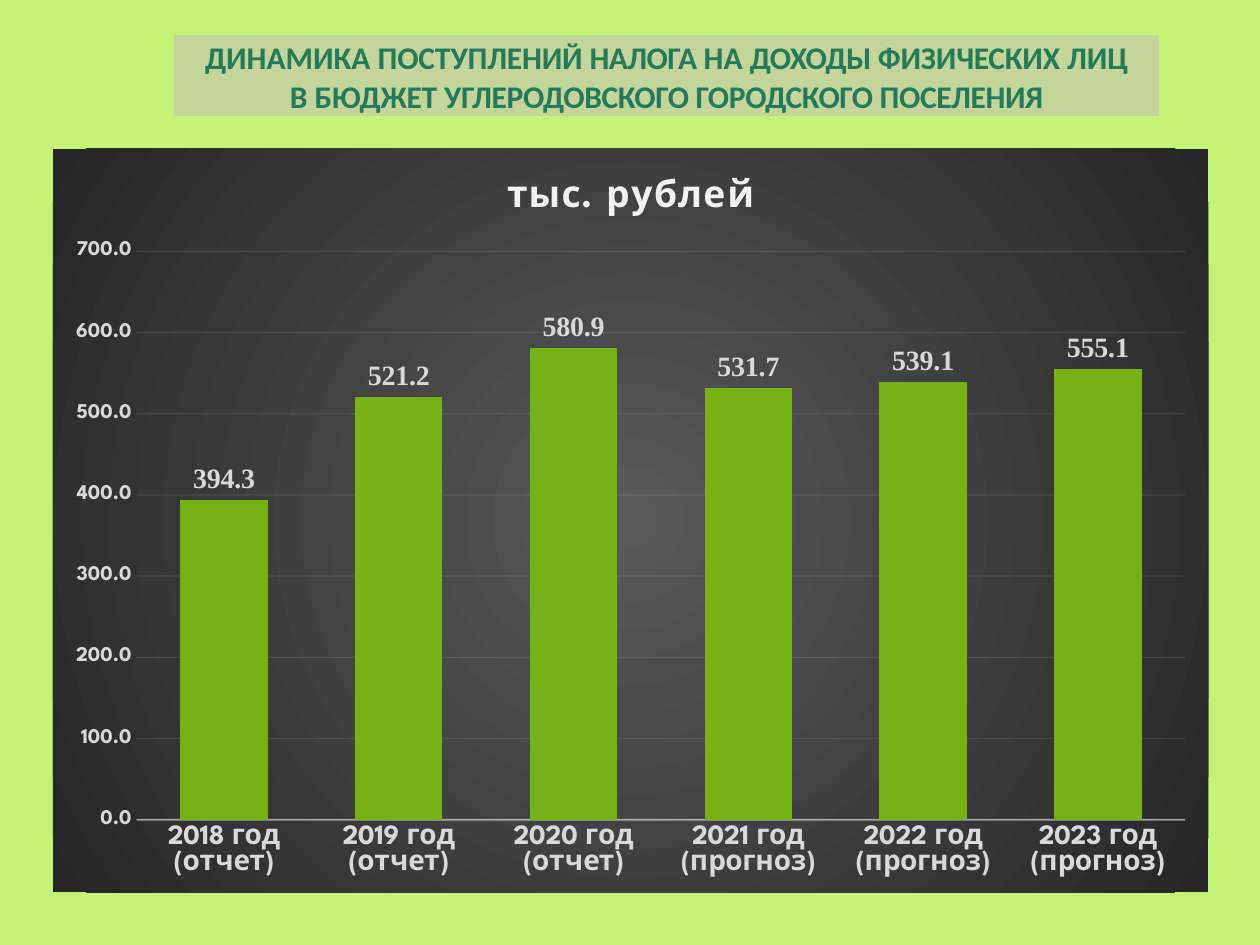
from lxml.etree import SubElement
from pptx import Presentation
from pptx.chart.data import CategoryChartData
from pptx.dml.color import RGBColor
from pptx.enum.chart import XL_CHART_TYPE, XL_LABEL_POSITION, XL_TICK_MARK
from pptx.enum.shapes import MSO_SHAPE
from pptx.enum.text import MSO_ANCHOR, PP_ALIGN
from pptx.oxml import parse_xml
from pptx.oxml.ns import nsdecls, qn
from pptx.util import Inches, Pt

LIME = RGBColor(0xC5, 0xF3, 0x75)
SAGE = RGBColor(0xC3, 0xD5, 0x9B)
HEADING_GREEN = RGBColor(0x25, 0x7A, 0x57)
BAR_GREEN = RGBColor(0x76, 0xB1, 0x15)
WHITE = RGBColor(0xFF, 0xFF, 0xFF)
OFF_WHITE = RGBColor(0xF2, 0xF2, 0xF2)
LIGHT_GREY = RGBColor(0xD9, 0xD9, 0xD9)

CHART_FONT = "League Spartan"
UNIT = "тыс. рублей"

# Each run is its text and its letter spacing in hundredths of a point.
HEADING = [
    [("ДИНАМИКА ", 0), ("ПОСТУПЛЕНИЙ ", -10), ("НАЛОГА ", -30), ("НА ", 0),
     ("ДОХОДЫ ", -30), ("ФИЗИЧЕСКИХ ", -10), ("ЛИЦ", 0)],
    [("В ", 0), ("БЮДЖЕТ ", -10),
     ("УГЛЕРОДОВСКОГО ГОРОДСКОГО ПОСЕЛЕНИЯ", -20)],
]
INCOME = [
    ("2018 год (отчет)", 394.3),
    ("2019 год (отчет)", 521.2),
    ("2020 год (отчет)", 580.9),
    ("2021 год (прогноз)", 531.7),
    ("2022 год (прогноз)", 539.1),
    ("2023 год (прогноз)", 555.1),
]


def set_font(font, name, size, color, bold=True):
    font.name = name
    font.size = Pt(size)
    font.bold = bold
    font.color.rgb = color


def set_spacing(run, hundredths):
    run.font._element.set("spc", str(hundredths))


def add_panel(slide, left, top, width, height, color):
    panel = slide.shapes.add_shape(
        MSO_SHAPE.RECTANGLE, Inches(left), Inches(top), Inches(width), Inches(height))
    panel.shadow.inherit = False
    panel.fill.solid()
    panel.fill.fore_color.rgb = color
    panel.line.fill.background()
    return panel


def add_heading(slide):
    frame = add_panel(slide, 1.38, 0.28, 7.82, 0.64, SAGE).text_frame
    frame.word_wrap = True
    frame.vertical_anchor = MSO_ANCHOR.TOP
    frame.margin_left = frame.margin_right = frame.margin_bottom = 0
    frame.margin_top = Inches(0.02)
    for index, runs in enumerate(HEADING):
        line = frame.add_paragraph() if index else frame.paragraphs[0]
        line.alignment = PP_ALIGN.CENTER
        line.line_spacing = 1.02
        for text, spacing in runs:
            run = line.add_run()
            run.text = text
            set_font(run.font, "Calibri", 18, HEADING_GREEN)
            set_spacing(run, spacing)


def set_line(line, color, width):
    line.color.rgb = color
    line.width = Pt(width)


def set_opacity(chart, line_xpath, percent):
    for color in chart._chartSpace.xpath(line_xpath + "/c:spPr/a:ln//a:srgbClr"):
        SubElement(color, qn("a:alpha")).set("val", str(percent * 1000))


def fill_chart_area(chart):
    """Put a circular dark gradient behind the whole chart."""
    area = parse_xml(
        f'<c:spPr {nsdecls("c", "a")}><a:gradFill><a:gsLst>'
        '<a:gs pos="0"><a:srgbClr val="595959"/></a:gs>'
        '<a:gs pos="100000"><a:srgbClr val="262626"/></a:gs></a:gsLst>'
        '<a:path path="circle"><a:fillToRect l="50000" t="50000" r="50000" b="50000"/>'
        '</a:path></a:gradFill><a:ln><a:noFill/></a:ln></c:spPr>')
    chart._chartSpace.find(qn("c:chart")).addnext(area)


def style_title(chart):
    chart.has_title = True
    run = chart.chart_title.text_frame.paragraphs[0].add_run()
    run.text = UNIT
    set_font(run.font, CHART_FONT, 21.3, OFF_WHITE)
    set_spacing(run, 100)
    chart.chart_title.include_in_layout = False


def style_axes(chart):
    years, amounts = chart.category_axis, chart.value_axis
    for axis, size in ((years, 16), (amounts, 12)):
        axis.major_tick_mark = axis.minor_tick_mark = XL_TICK_MARK.NONE
        set_font(axis.tick_labels.font, CHART_FONT, size, LIGHT_GREY)
    set_line(years.format.line, OFF_WHITE, 1)
    set_opacity(chart, ".//c:catAx", 54)

    amounts.minimum_scale, amounts.maximum_scale = 0, 700
    amounts.major_unit = 100
    amounts.tick_labels.number_format = "0.0"
    amounts.tick_labels.number_format_is_linked = False
    amounts.format.line.fill.background()
    set_line(amounts.major_gridlines.format.line, OFF_WHITE, 0.75)
    set_opacity(chart, ".//c:valAx/c:majorGridlines", 10)


def style_bars(chart):
    plot = chart.plots[0]
    plot.gap_width = 100
    plot.overlap = -24
    plot.vary_by_categories = False
    bars = plot.series[0]
    bars.format.fill.solid()
    bars.format.fill.fore_color.rgb = BAR_GREEN
    labels = bars.data_labels
    labels.show_value = True
    labels.position = XL_LABEL_POSITION.OUTSIDE_END
    labels.number_format = "0.0"
    labels.number_format_is_linked = False
    set_font(labels.font, "Times New Roman", 16, LIGHT_GREY)


def add_income_chart(slide):
    data = CategoryChartData(number_format="0.0")
    data.categories = [year for year, _ in INCOME]
    data.add_series(UNIT, [amount for _, amount in INCOME])
    chart = slide.shapes.add_chart(
        XL_CHART_TYPE.COLUMN_CLUSTERED,
        Inches(0.42), Inches(1.18), Inches(9.17), Inches(5.9), data).chart
    chart.has_legend = False
    set_font(chart.font, CHART_FONT, 10, WHITE, bold=False)
    fill_chart_area(chart)
    style_title(chart)
    style_axes(chart)
    style_bars(chart)


def main():
    deck = Presentation()
    deck.slide_width, deck.slide_height = Inches(10), Inches(7.5)
    slide = deck.slides.add_slide(deck.slide_layouts[6])
    add_panel(slide, 0, 0, 10, 7.5, LIME)
    add_heading(slide)
    add_income_chart(slide)
    deck.save("out.pptx")


if __name__ == "__main__":
    main()
